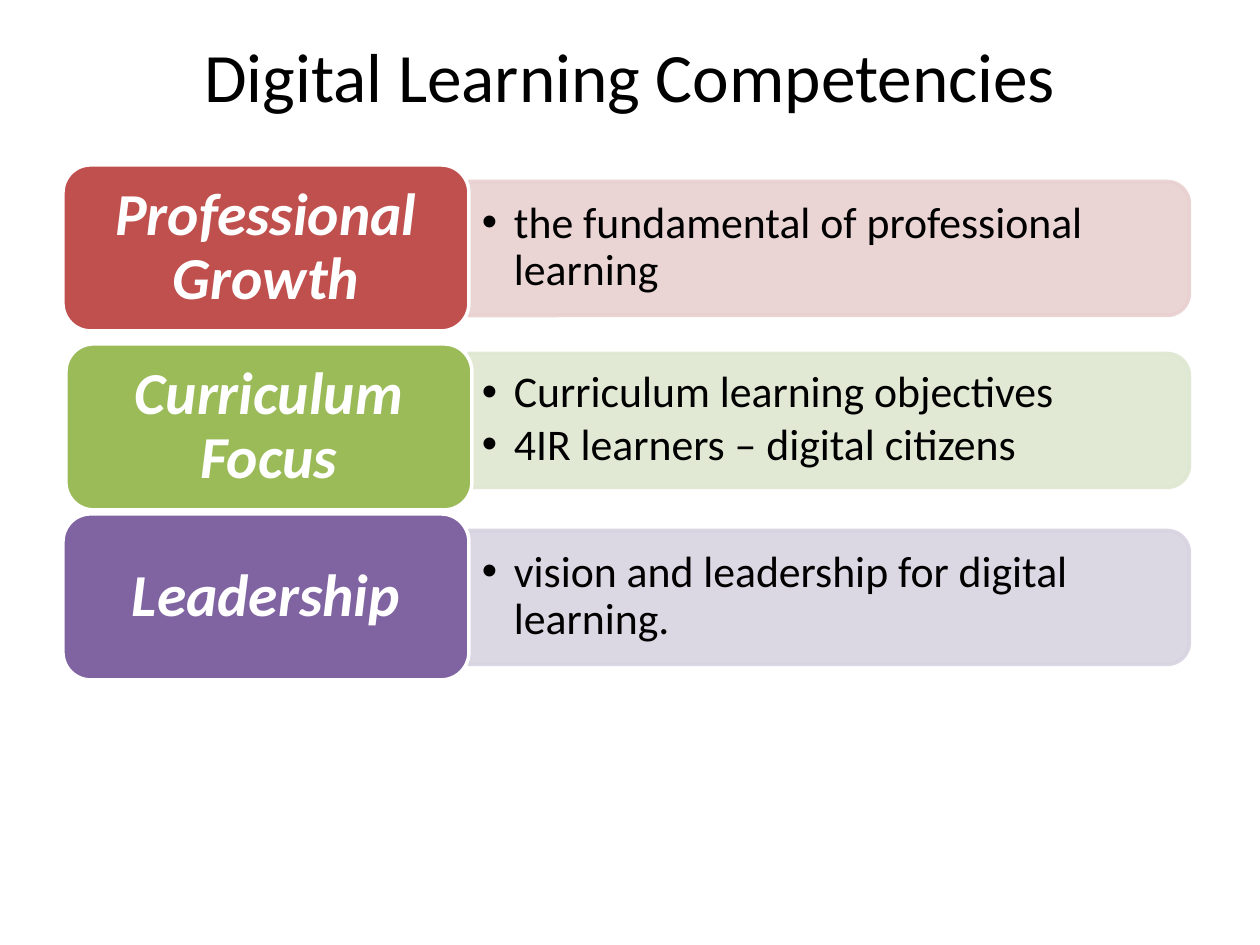
from dataclasses import dataclass

from lxml.etree import SubElement
from pptx import Presentation
from pptx.dml.color import RGBColor
from pptx.enum.shapes import MSO_SHAPE
from pptx.enum.text import MSO_ANCHOR, PP_ALIGN
from pptx.oxml.ns import qn
from pptx.util import Pt

PX = 914400 // 126


@dataclass(frozen=True)
class Theme:
    font: str = "Calibri"
    ink: str = "000000"
    paper: str = "FFFFFF"
    title_size: float = 39.6
    tile_size: int = 34
    bullet_size: int = 25
    bar_alpha: int = 90


theme = Theme()


def paint(shape, fill, line, alpha=100):
    """Give a shape a fill and a 2 pt outline, alpha in percent."""
    shape.shadow.inherit = False
    shape.fill.solid()
    shape.fill.fore_color.rgb = RGBColor.from_string(fill)
    shape.line.color.rgb = RGBColor.from_string(line)
    shape.line.width = Pt(2)
    if alpha < 100:
        for color in shape._element.spPr.iter(qn("a:srgbClr")):
            SubElement(color, qn("a:alpha"), val=str(alpha * 1000))


def style(frame, size, color, margins, align, line_spacing=0.9):
    """Format a whole text frame; margins are side, top and bottom in px."""
    side, top, bottom = (margin * PX for margin in margins)
    frame.word_wrap = True
    frame.vertical_anchor = MSO_ANCHOR.MIDDLE
    frame.margin_left = frame.margin_right = side
    frame.margin_top, frame.margin_bottom = top, bottom
    for paragraph in frame.paragraphs:
        paragraph.alignment = align
        paragraph.line_spacing = line_spacing
        for run in paragraph.runs:
            run.font.name = theme.font
            run.font.size = Pt(size)
            run.font.color.rgb = RGBColor.from_string(color)


prs = Presentation()
prs.slide_width, prs.slide_height = 1260 * PX, 945 * PX
slide = prs.slides.add_slide(prs.slide_layouts[6])
shapes = slide.shapes

title = shapes.add_textbox(63 * PX, 38 * PX, 1134 * PX, 158 * PX)
title.text_frame.text = "Digital Learning Competencies"
style(title.text_frame, theme.title_size, theme.ink, (13, 0, 85), PP_ALIGN.CENTER, 1.0)

# name, tile colour, bar colour, tile left, tile middle, bar middle, points
competencies = [
    ("Professional Growth", "C0504D", "E8D0D0", 63, 248, 248,
     ["the fundamental of professional learning"]),
    ("Curriculum Focus", "9BBB59", "DEE7D1", 66, 427, 420,
     ["Curriculum learning objectives", "4IR learners – digital citizens"]),
    ("Leadership", "8064A2", "D8D3E0", 63, 597, 597,
     ["vision and leadership for digital learning."]),
]
TILE_W, TILE_H = 406, 166
BAR_LEFT, BAR_W, BAR_H = 469, 721, 134
POINTS_W, POINTS_H = 714, 120

for name, tile_color, bar_color, tile_left, tile_mid, bar_mid, points in competencies:
    # The bar stands upright and is turned so its rounded end faces right.
    bar = shapes.add_shape(
        MSO_SHAPE.ROUND_2_SAME_RECTANGLE,
        (BAR_LEFT + (BAR_W - BAR_H) // 2) * PX, (bar_mid - BAR_W // 2) * PX,
        BAR_H * PX, BAR_W * PX)
    bar.rotation = 90
    paint(bar, bar_color, bar_color, theme.bar_alpha)

    details = shapes.add_textbox(
        BAR_LEFT * PX, (bar_mid - POINTS_H // 2) * PX, POINTS_W * PX, POINTS_H * PX)
    details.text_frame.text = "\n".join(points)
    for paragraph in details.text_frame.paragraphs:
        properties = paragraph._p.get_or_add_pPr()
        properties.set("marL", str(32 * PX))
        properties.set("indent", str(-32 * PX))
        SubElement(properties, qn("a:buFont"), typeface="Arial")
        SubElement(properties, qn("a:buChar"), char="•")
        paragraph.space_after = Pt(3)
    style(details.text_frame, theme.bullet_size, theme.ink, (13, 6, 6), PP_ALIGN.LEFT)

    tile = shapes.add_shape(
        MSO_SHAPE.ROUNDED_RECTANGLE, tile_left * PX, (tile_mid - TILE_H // 2) * PX,
        TILE_W * PX, TILE_H * PX)
    paint(tile, tile_color, theme.paper)
    tile.text_frame.text = name
    style(tile.text_frame, theme.tile_size, theme.paper, (18, 10, 10), PP_ALIGN.CENTER)
    for run in tile.text_frame.paragraphs[0].runs:
        run.font.bold = run.font.italic = True

prs.save("out.pptx")
